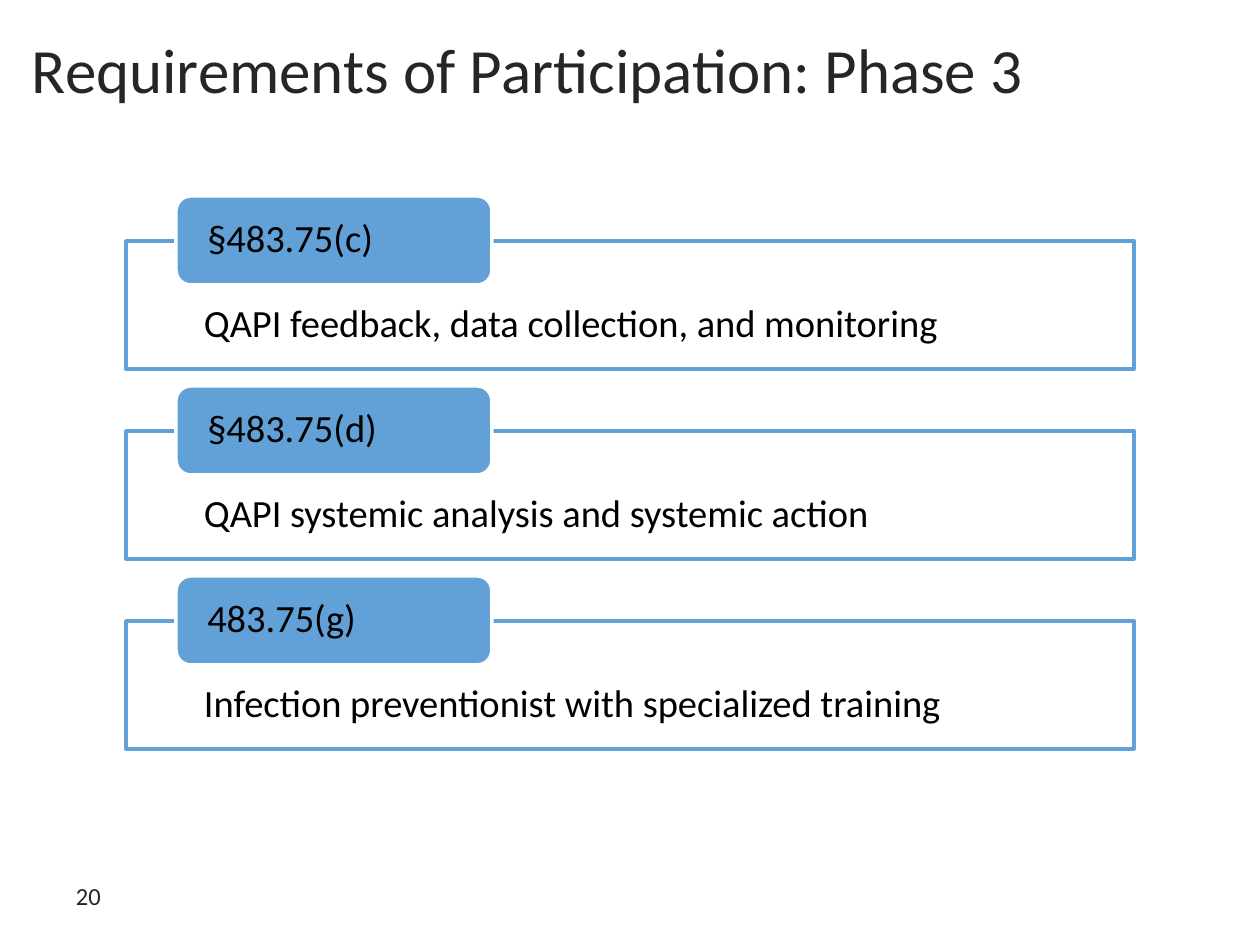
import pptx
import pptx.util
from pptx.dml.color import RGBColor
from pptx.enum.shapes import MSO_SHAPE
from pptx.enum.text import MSO_ANCHOR, PP_ALIGN

PX = 914400 // 126
BLUE = RGBColor(0x61, 0xA1, 0xD7)
WHITE = RGBColor(0xFF, 0xFF, 0xFF)
BLACK = RGBColor(0x00, 0x00, 0x00)
DARK = RGBColor(0x26, 0x26, 0x26)

REQUIREMENTS = [
    ("§483.75(c)", "QAPI feedback, data collection, and monitoring"),
    ("§483.75(d)", "QAPI systemic analysis and systemic action"),
    ("483.75(g)", "Infection preventionist with specialized training"),
]
FIRST_TOP, PITCH = 241, 190
TAG_RISE = 45


def write(box, text, size, color, anchor, insets):
    """Put one left-aligned line of text in a box."""
    frame = box.text_frame
    left, top, right, bottom = (inset * PX for inset in insets)
    layout = {"word_wrap": True, "vertical_anchor": anchor,
              "margin_left": left, "margin_top": top,
              "margin_right": right, "margin_bottom": bottom}
    for name, value in layout.items():
        setattr(frame, name, value)
    para = frame.paragraphs[0]
    para.alignment = PP_ALIGN.LEFT
    para.line_spacing = 0.9
    span = para.add_run()
    span.text = text
    for name, value in {"name": "Calibri", "size": pptx.util.Pt(size)}.items():
        setattr(span.font, name, value)
    span.font.color.rgb = color


def add_panel(kind, bounds, fill, line):
    """Add a filled and outlined shape without a shadow."""
    panel = page.shapes.add_shape(kind, *(length * PX for length in bounds))
    panel.shadow.inherit = False
    panel.fill.solid()
    panel.fill.fore_color.rgb = fill
    panel.line.color.rgb = line
    panel.line.width = pptx.util.Pt(2)
    return panel


deck = pptx.Presentation()
deck.slide_width = 1260 * PX
deck.slide_height = 945 * PX
page = deck.slides.add_slide(deck.slide_layouts[6])

# Title
title = page.shapes.add_textbox(32 * PX, 0, 1197 * PX, 147 * PX)
write(title, "Requirements of Participation: Phase 3", 36, DARK,
      MSO_ANCHOR.MIDDLE, (0, 6, 0, 6))

# Requirements: outlined description with a tag across its top edge
for row, (section, description) in enumerate(REQUIREMENTS):
    top = FIRST_TOP + row * PITCH
    panel = add_panel(MSO_SHAPE.RECTANGLE, (126, top, 1008, 128), WHITE, BLUE)
    write(panel, description, 22, BLACK, MSO_ANCHOR.TOP, (78, 63, 78, 21))
    tag = add_panel(MSO_SHAPE.ROUNDED_RECTANGLE,
                    (176, top - TAG_RISE, 316, 89), BLUE, WHITE)
    write(tag, section, 22, BLACK, MSO_ANCHOR.MIDDLE, (27, 0, 27, 0))

# Slide number
number = page.shapes.add_textbox(63 * PX, 861 * PX, 105 * PX, 73 * PX)
write(number, "20", 14, DARK, MSO_ANCHOR.MIDDLE, (13, 6, 13, 6))

deck.save("out.pptx")
